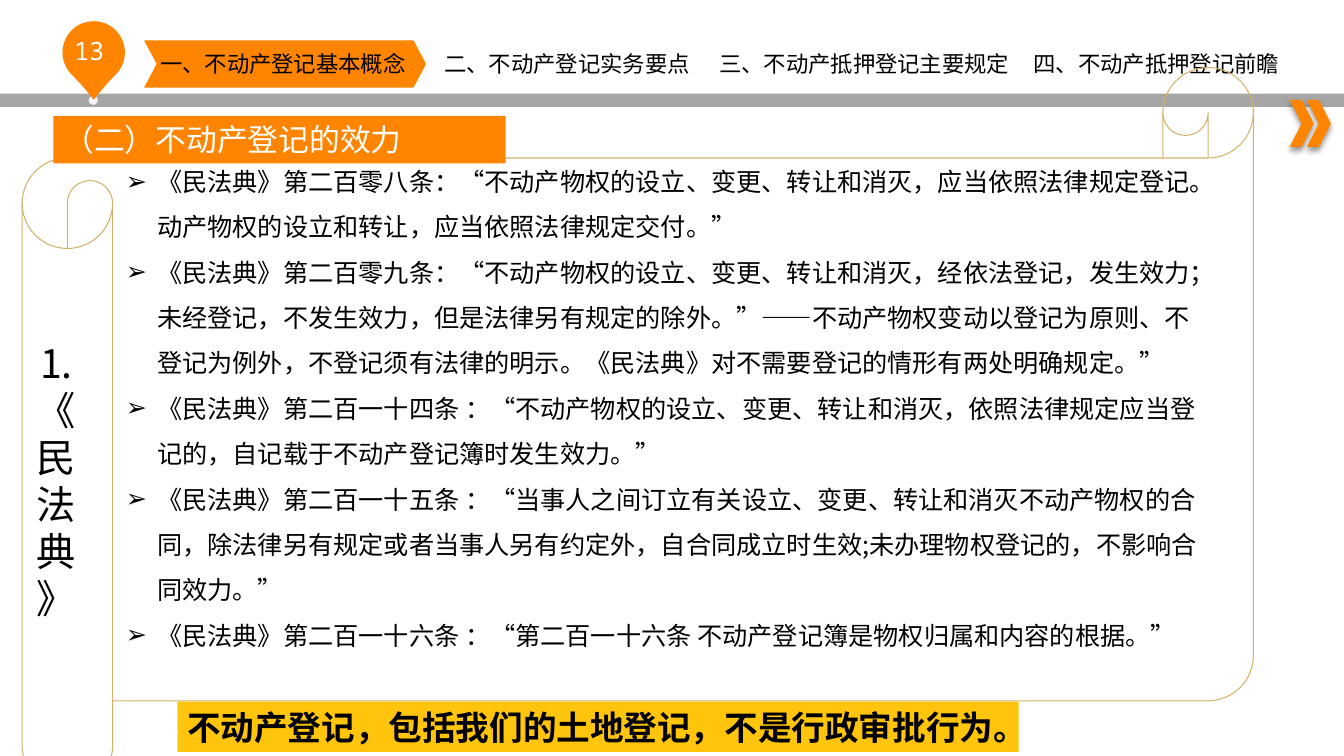
from lxml import etree
from pptx import Presentation
from pptx.dml.color import RGBColor
from pptx.enum.shapes import MSO_SHAPE as Shape
from pptx.enum.text import MSO_ANCHOR as Anchor, MSO_AUTO_SIZE as AutoSize, PP_ALIGN as Align
from pptx.oxml import parse_xml
from pptx.oxml.ns import nsdecls, qn
from pptx.util import Inches, Pt

ORANGE = "FF8500"
BLACK = "000000"
WHITE = "FFFFFF"
SANS = "Noto Sans CJK SC"

deck = Presentation()
deck.slide_width = Inches(13.34)
deck.slide_height = Inches(7.5)
page = deck.slides.add_slide(deck.slide_layouts[1])


def add_block(kind, place, color):
    block = page.shapes.add_shape(kind, *map(Inches, place))
    block.shadow.inherit = False
    block.fill.solid()
    block.fill.fore_color.rgb = RGBColor.from_string(color)
    block.line.fill.background()
    return block


def write(box, text, size, font, color=BLACK, align=Align.LEFT, anchor=Anchor.MIDDLE):
    frame = box.text_frame
    frame.text = text
    frame.word_wrap = True
    frame.auto_size = AutoSize.NONE
    frame.vertical_anchor = anchor
    for para in frame.paragraphs:
        para.alignment = align
        para.space_before = Pt(0)
        for span in para.runs:
            span.font.size = Pt(size)
            span.font.name = font
            span.font.color.rgb = RGBColor.from_string(color)
            east_asian = etree.SubElement(span.font._element, qn("a:ea"))
            east_asian.set("typeface", font)
    return frame


add_block(Shape.RECTANGLE, (0, 0.93, 13.34, 0.13), "A6A6A6")
for left in (12.8, 12.97):
    arrow = add_block(Shape.CHEVRON, (left, 0.99, 0.24, 0.47), ORANGE)
    effects = arrow.element.spPr.find(qn("a:effectLst"))
    effects.append(parse_xml(
        f'<a:outerShdw {nsdecls("a")} blurRad="{Pt(4)}" dist="{Pt(3)}" dir="5400000" '
        'rotWithShape="0"><a:srgbClr val="000000"><a:alpha val="40000"/></a:srgbClr></a:outerShdw>'))

add_block(Shape.OVAL, (0.88, 0.95, 0.09, 0.09), "F6F6F6")
pin = add_block(Shape.TEAR, (0.62, 0.21, 0.62, 0.62), ORANGE)
pin.adjustments[0] = 1.07
pin.rotation = 135
number = page.shapes.add_textbox(*map(Inches, (0.45, 0.3, 0.87, 0.4)))
write(number, "13", 18, "Noto Sans Mono", WHITE, Align.CENTER)

active_tab = add_block(Shape.CHEVRON, (1.43, 0.4, 2.8, 0.47), ORANGE)
active_tab.adjustments[0] = 0.267
tabs = [
    (1.59, 2.47, "一、不动产登记基本概念", Align.LEFT),
    (4.41, 2.55, "二、不动产登记实务要点", Align.LEFT),
    (6.9, 3.36, "三、不动产抵押登记主要规定", Align.CENTER),
    (10.26, 2.59, "四、不动产抵押登记前瞻", Align.LEFT),
]
for left, width, label, align in tabs:
    tab = page.shapes.add_textbox(Inches(left), Inches(0.5), Inches(width), Inches(0.27))
    frame = write(tab, label, 16, "Calibri", align=align)
    frame.margin_left = frame.margin_right = frame.margin_top = frame.margin_bottom = 0

scroll = add_block(Shape.HORIZONTAL_SCROLL, (0.22, 0.67, 12.22, 7.18), WHITE)
scroll.fill.background()
scroll.line.color.rgb = RGBColor.from_string("D3B06B")
scroll.line.width = Pt(0.75)

law_name = page.shapes.add_textbox(*map(Inches, (0.22, 3.3, 0.68, 2.93)))
write(law_name, "1.《民法典\n》", 28, SANS, align=Align.CENTER)

articles = [
    "《民法典》第二百零八条：“不动产物权的设立、变更、转让和消灭，应当依照法律规定登记。动产物权的设立和转让，应当依照法律规定交付。”",
    "《民法典》第二百零九条：“不动产物权的设立、变更、转让和消灭，经依法登记，发生效力；未经登记，不发生效力，但是法律另有规定的除外。”——不动产物权变动以登记为原则、不登记为例外，不登记须有法律的明示。《民法典》对不需要登记的情形有两处明确规定。”",
    "《民法典》第二百一十四条 ：“不动产物权的设立、变更、转让和消灭，依照法律规定应当登记的，自记载于不动产登记簿时发生效力。”",
    "《民法典》第二百一十五条 ：“当事人之间订立有关设立、变更、转让和消灭不动产物权的合同，除法律另有规定或者当事人另有约定外，自合同成立时生效;未办理物权登记的，不影响合同效力。”",
    "《民法典》第二百一十六条 ：“第二百一十六条 不动产登记簿是物权归属和内容的根据。”",
]
body = page.placeholders[1]
body.left, body.top, body.width, body.height = map(Inches, (1.15, 1.45, 10.83, 5.71))
frame = write(body, "\n".join(articles), 18, "Noto Sans CJK JP", anchor=Anchor.TOP)
for para in frame.paragraphs:
    para.line_spacing = 1.5
    properties = para._p.get_or_add_pPr()
    properties.set("marL", str(Inches(0.31)))
    properties.set("indent", str(Inches(-0.31)))
    etree.SubElement(properties, qn("a:buChar")).set("char", "➢")

conclusion = add_block(Shape.RECTANGLE, (1.76, 6.96, 8.35, 0.5), "FFC50D")
frame = write(conclusion, "不动产登记，包括我们的土地登记，不是行政审批行为。", 24, SANS)
frame.paragraphs[0].runs[0].font.bold = True

title = page.shapes.title
title.left, title.top, title.width, title.height = map(Inches, (0.53, 1.15, 4.49, 0.47))
title.fill.solid()
title.fill.fore_color.rgb = RGBColor.from_string(ORANGE)
write(title, "（二）不动产登记的效力", 22, SANS, WHITE)
title.element.getparent().append(title.element)

deck.save("out.pptx")
